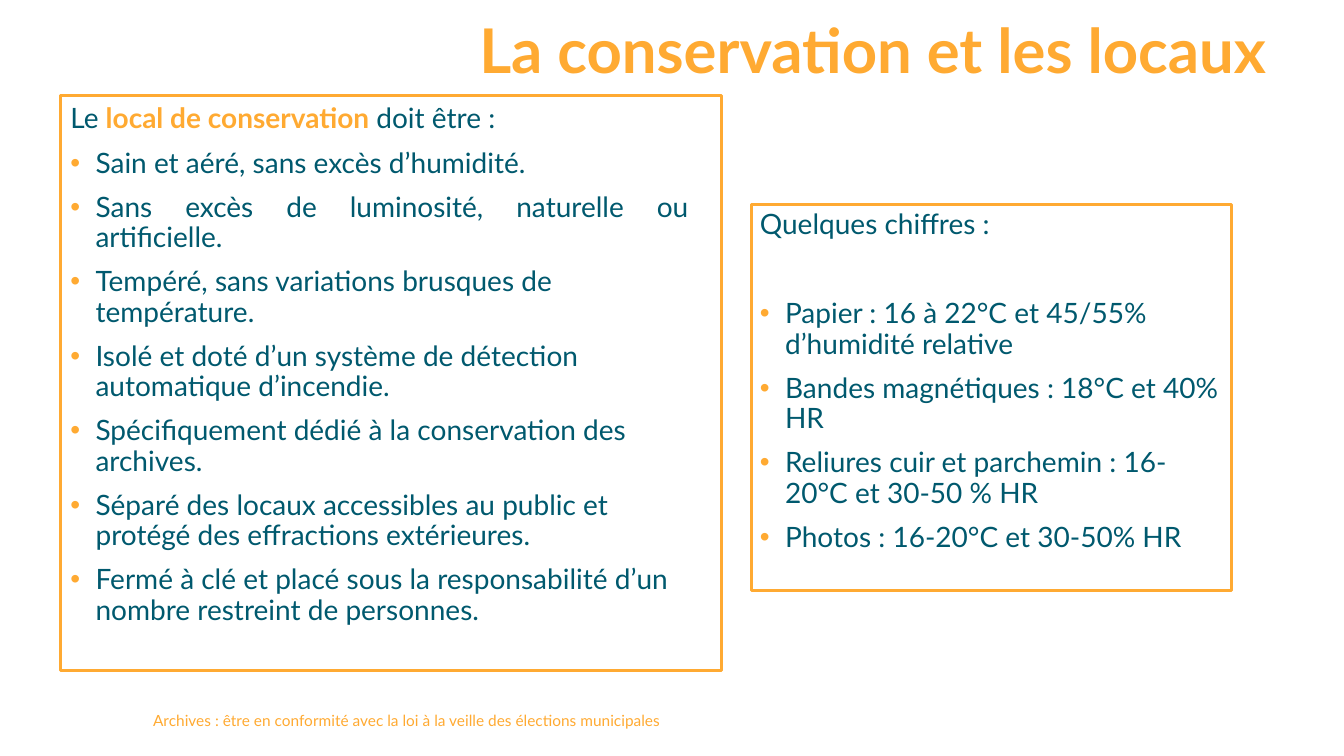
from pptx import Presentation
from pptx.dml.color import RGBColor
from pptx.enum.shapes import MSO_SHAPE
from pptx.enum.text import MSO_ANCHOR as Anchor, MSO_AUTO_SIZE as AutoSize, PP_ALIGN as Align
from pptx.oxml.ns import qn
from pptx.util import Pt
from lxml.etree import SubElement

ORANGE, TEAL = "FFAA32", "00596E"
FONT = "Lato"
INDENT = 18

TITLE = "La conservation et les locaux"
TITLE_AREA = (195.1, 21.6, 717.1, 33.1)
FOOTER = "Archives : être en conformité avec la loi à la veille des élections municipales"
FOOTER_AREA = (109.4, 500.4, 532.8, 28.8)

# Intro runs are (text, highlighted)
PANELS = [
    {
        "frame": (43.2, 68.4, 472.3, 410.4),
        "area": (43.2, 71.3, 455.8, 418.3),
        "intro": [("Le ", False), ("local de conservation ", True), ("doit être :", False)],
        "gap": 10,
        "justified": 1,
        "points": [
            "Sain et aéré, sans excès d’humidité.",
            "Sans excès de luminosité, naturelle ou artificielle.",
            "Tempéré, sans variations brusques de température.",
            "Isolé et doté d’un système de détection automatique d’incendie.",
            "Spécifiquement dédié à la conservation des archives.",
            "Séparé des locaux accessibles au public et protégé des effractions extérieures.",
            "Fermé à clé et placé sous la responsabilité d’un nombre restreint de personnes.",
        ],
    },
    {
        "frame": (537.1, 146.2, 342.7, 275.8),
        "area": (535.7, 146.9, 344.2, 275),
        "intro": [("Quelques chiffres :", False)],
        "gap": 42,
        "justified": None,
        "points": [
            "Papier : 16 à 22°C et 45/55% d’humidité relative",
            "Bandes magnétiques : 18°C et 40% HR",
            "Reliures cuir et parchemin : 16-20°C et 30-50 % HR",
            "Photos : 16-20°C et 30-50% HR",
        ],
    },
]


def color(value):
    return RGBColor.from_string(value)


def points(area):
    return [Pt(length) for length in area]


def format_text(target, **values):
    for name, value in values.items():
        setattr(target, name, value)


def add_run(paragraph, text, size, ink, bold=False):
    run = paragraph.add_run()
    run.text = text
    format_text(run.font, name=FONT, size=Pt(size), bold=bold)
    run.font.color.rgb = color(ink)


def add_bullet(paragraph):
    properties = paragraph._p.get_or_add_pPr()
    properties.set("marL", str(Pt(INDENT)))
    properties.set("indent", str(-Pt(INDENT)))
    tint = SubElement(properties, qn("a:buClr"))
    SubElement(tint, qn("a:srgbClr"), val=ORANGE)
    SubElement(properties, qn("a:buFont"), typeface="Arial")
    SubElement(properties, qn("a:buChar"), char="•")


def add_panel(slide, panel):
    text = slide.shapes.add_textbox(*points(panel["area"])).text_frame
    text.word_wrap = True
    intro = text.paragraphs[0]
    intro.line_spacing = 0.9
    for words, highlighted in panel["intro"]:
        add_run(intro, words, 20, ORANGE if highlighted else TEAL, highlighted)
    for index, words in enumerate(panel["points"]):
        point = text.add_paragraph()
        add_bullet(point)
        format_text(point, line_spacing=0.9, space_before=Pt(10 if index else panel["gap"]))
        if index == panel["justified"]:
            point.alignment = Align.JUSTIFY
        add_run(point, words, 20, TEAL)

    frame = slide.shapes.add_shape(MSO_SHAPE.RECTANGLE, *points(panel["frame"]))
    frame.shadow.inherit = False
    frame.fill.background()
    frame.line.color.rgb = color(ORANGE)
    frame.line.width = Pt(2.25)


def main():
    deck = Presentation()
    deck.slide_width, deck.slide_height = Pt(960), Pt(540)
    slide = deck.slides.add_slide(deck.slide_layouts[5])

    title = slide.shapes.title
    title.left, title.top, title.width, title.height = points(TITLE_AREA)
    format_text(title.text_frame, auto_size=AutoSize.NONE, vertical_anchor=Anchor.MIDDLE)
    heading = title.text_frame.paragraphs[0]
    format_text(heading, alignment=Align.RIGHT, line_spacing=0.9)
    add_run(heading, TITLE, 44, ORANGE, True)

    for panel in PANELS:
        add_panel(slide, panel)

    footer = slide.shapes.add_textbox(*points(FOOTER_AREA)).text_frame
    format_text(footer, word_wrap=True, vertical_anchor=Anchor.MIDDLE,
                margin_left=0, margin_top=0, margin_right=0, margin_bottom=0)
    add_run(footer.paragraphs[0], FOOTER, 11, ORANGE)

    deck.save("out.pptx")


if __name__ == "__main__":
    main()
